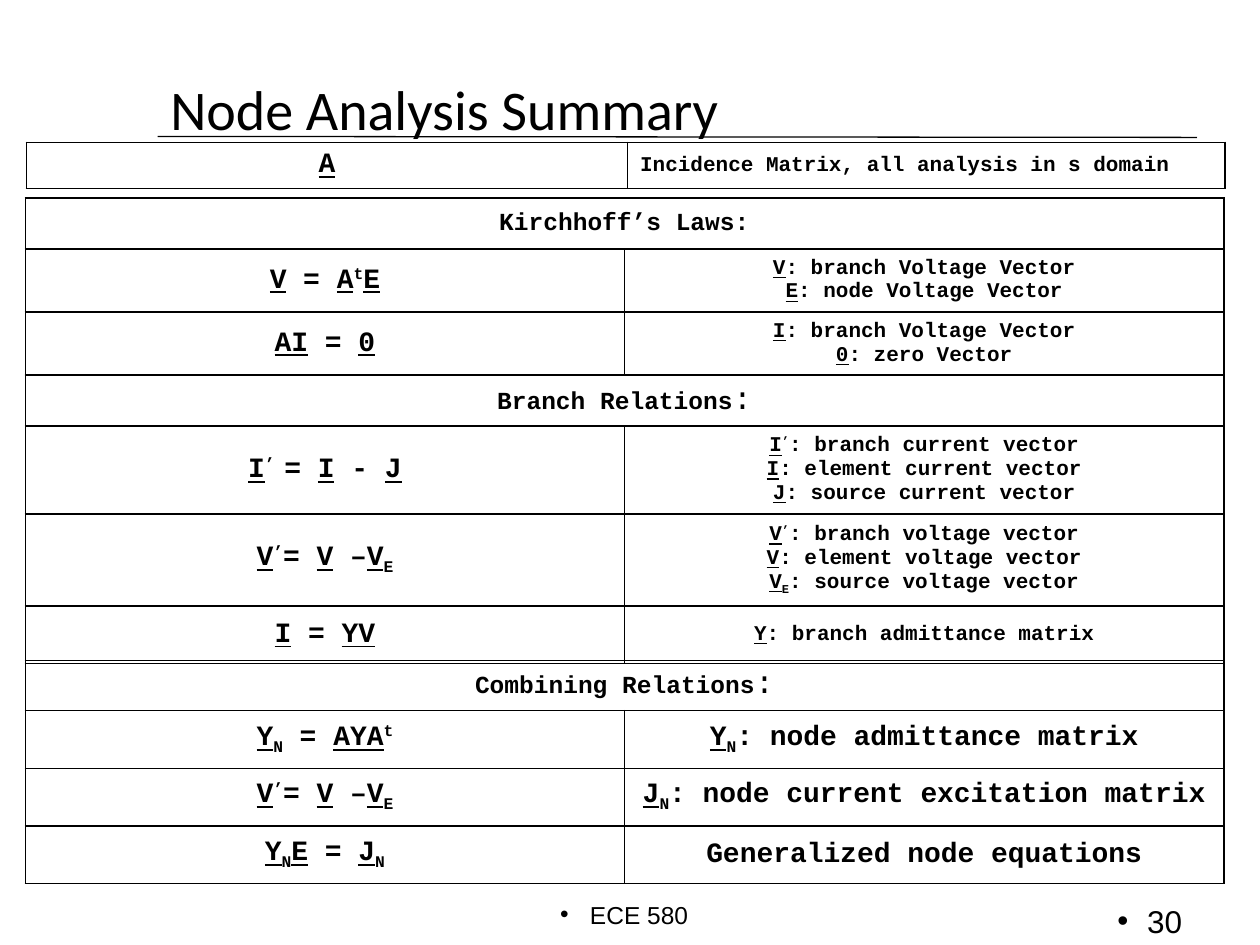
from pptx import Presentation, util as u
from pptx.dml.color import RGBColor
from pptx.enum import shapes, text
from pptx.oxml import parse_xml
from pptx.oxml.ns import nsdecls, qn
from lxml import etree

BLACK = RGBColor(0, 0, 0)
CODE = "Courier New"
LEFT, COLUMN = 0.51, 12.08
CENTER, RIGHT = text.PP_ALIGN.CENTER, text.PP_ALIGN.RIGHT
VOLTAGE_RELATION = "_V_^’^= _V_ –_V_~E~"

INCIDENCE = [(0.89, 16, "_A_", 12, "Incidence Matrix, all analysis in s domain")]
KIRCHHOFF = [
    (1.03, 14, "Kirchhoff’s Laws:", None, None),
    (1.2, 16, "_V_ = _A_^t^_E_", 12,
     "_V_: branch Voltage Vector\n_E_: node Voltage Vector"),
    (1.2, 16, "_AI_ = _0_", 12, "_I_: branch Voltage Vector\n_0_: zero Vector"),
]
BRANCH = [
    (0.96, 14, "Branch Relations*:*", None, None),
    (1.7, 16, "_I_^’ ^= _I_ - _J_", 12,
     "_I_^’^: branch current vector\n_I_: element current vector\n"
     "_J_: source current vector"),
    (1.73, 16, VOLTAGE_RELATION, 12,
     "_V_^’^: branch voltage vector\n_V_: element voltage vector\n"
     "_V_~E~: source voltage vector"),
    (1.16, 16, "_I_ = _YV_", 12, "_Y_: branch admittance matrix"),
]
COMBINING = [
    (0.97, 14, "Combining Relations*:*", None, None),
    (1.16, 16, "_Y_~N~ = _AYA_^t^", 16, "_Y_~N~: node admittance matrix"),
    (1.16, 16, VOLTAGE_RELATION, 16, "_J_~N~: node current excitation matrix"),
    (1.16, 16, "_Y_~N~_E_ = _J_~N~", 16, "Generalized node equations"),
]


def style(font, name, size, bold=False):
    """Set the face, size, weight and black colour of a font."""
    font.name, font.size, font.bold = name, u.Pt(size), bold
    font.color.rgb = BLACK


def split_marks(line):
    """Yield (mark, words) pairs; marks are _under_, ^super^, ~sub~ and *large*."""
    mark, words = "", ""
    for letter in line:
        if letter in "_^~*":
            if words:
                yield mark, words
            mark, words = ("" if mark == letter else letter), ""
        else:
            words += letter
    if words:
        yield mark, words


def write_formula(cell, content, size, align):
    """Fill a cell with marked-up lines of formula text."""
    for number, line in enumerate(content.split("\n")):
        frame = cell.text_frame
        para = frame.add_paragraph() if number else frame.paragraphs[0]
        para.alignment = align
        style(para.font, CODE, size, True)
        for mark, words in split_marks(line):
            span = para.add_run()
            span.text = words
            if mark == "_":
                span.font.underline = True
            elif mark == "*":
                span.font.size, span.font.bold = u.Pt(18), False
            elif mark:
                baseline = "30000" if mark == "^" else "-25000"
                span.font._element.set("baseline", baseline)


def outline_cell(cell):
    """Clear the fill of a cell and draw its four borders."""
    cell.fill.background()
    properties = cell._tc.get_or_add_tcPr()
    for index, side in enumerate(("lnL", "lnR", "lnT", "lnB")):
        properties.insert(index, parse_xml(
            f'<a:{side} {nsdecls("a")} w="12700"><a:solidFill>'
            f'<a:srgbClr val="{BLACK}"/></a:solidFill></a:{side}>'))


def add_relations(page, left, top, widths, rows, note_align=CENTER):
    """Add a table of formulas and notes, merging rows that are headings."""
    heights = [row[0] for row in rows]
    table = page.shapes.add_table(
        len(rows), 2, u.Cm(left), u.Cm(top),
        u.Cm(sum(widths)), u.Cm(sum(heights))).table
    table.first_row = table.horz_banding = False
    for column, width in zip(table.columns, widths):
        column.width = u.Cm(width)
    for index, (height, size, formula, note_size, note) in enumerate(rows):
        table.rows[index].height = u.Cm(height)
        first, second = table.cell(index, 0), table.cell(index, 1)
        for cell in (first, second):
            cell.vertical_anchor = text.MSO_ANCHOR.MIDDLE
            outline_cell(cell)
        write_formula(first, formula, size, CENTER)
        if note:
            write_formula(second, note, note_size, note_align)
        else:
            first.merge(second)


def add_heading(page, left, top, width, height):
    """Place the title and the rule beneath it."""
    title = page.shapes.title
    title.left, title.top = u.Cm(left), u.Cm(top)
    title.width, title.height = u.Cm(width), u.Cm(height)
    frame = title.text_frame
    frame.text = "Node Analysis Summary"
    frame.auto_size = text.MSO_AUTO_SIZE.NONE
    frame.vertical_anchor = text.MSO_ANCHOR.MIDDLE
    para = frame.paragraphs[0]
    para.alignment = text.PP_ALIGN.LEFT
    style(para.font, "Calibri", 32)
    rule = page.shapes.add_connector(
        shapes.MSO_CONNECTOR.STRAIGHT, u.Cm(left), u.Cm(top + 1.38),
        u.Cm(left + width + 0.05), u.Cm(top + 1.4))
    rule.line.color.rgb, rule.line.width = BLACK, u.Pt(0.75)
    etree.SubElement(rule._element.spPr, qn("a:effectLst"))


def add_footer(page, left, top, width, words, size, align):
    """Add a bulleted footer text."""
    box = page.shapes.add_textbox(u.Cm(left), u.Cm(top), u.Cm(width), u.Cm(1.32))
    box.text_frame.word_wrap = True
    para = box.text_frame.paragraphs[0]
    para.text, para.alignment = words, align
    properties = para._p.get_or_add_pPr()
    properties.set("marL", str(u.Cm(0.6)))
    properties.set("indent", str(-u.Cm(0.6)))
    etree.SubElement(properties, qn("a:buFont")).set("typeface", "Arial")
    etree.SubElement(properties, qn("a:buChar")).set("char", "•")
    style(para.font, "Arial", size)


def main():
    """Build and save the slide."""
    deck = Presentation()
    deck.slide_width, deck.slide_height = u.Cm(25.4), u.Cm(19.05)
    page = deck.slides.add_slide(deck.slide_layouts[5])
    add_footer(page, 8.56, 18.01, 8.05, "ECE 580", 14, CENTER)
    add_footer(page, 18.16, 18.06, 5.92, "30", 18, RIGHT)
    add_heading(page, 3.18, 1.37, 20.9, 1.63)
    add_relations(page, 0.53, 2.87, (12.12, 12.04), INCIDENCE, text.PP_ALIGN.LEFT)
    for top, rows in ((3.99, KIRCHHOFF), (7.57, BRANCH), (13.31, COMBINING)):
        add_relations(page, LEFT, top, (COLUMN, COLUMN), rows)
    deck.save("out.pptx")


if __name__ == "__main__":
    main()
